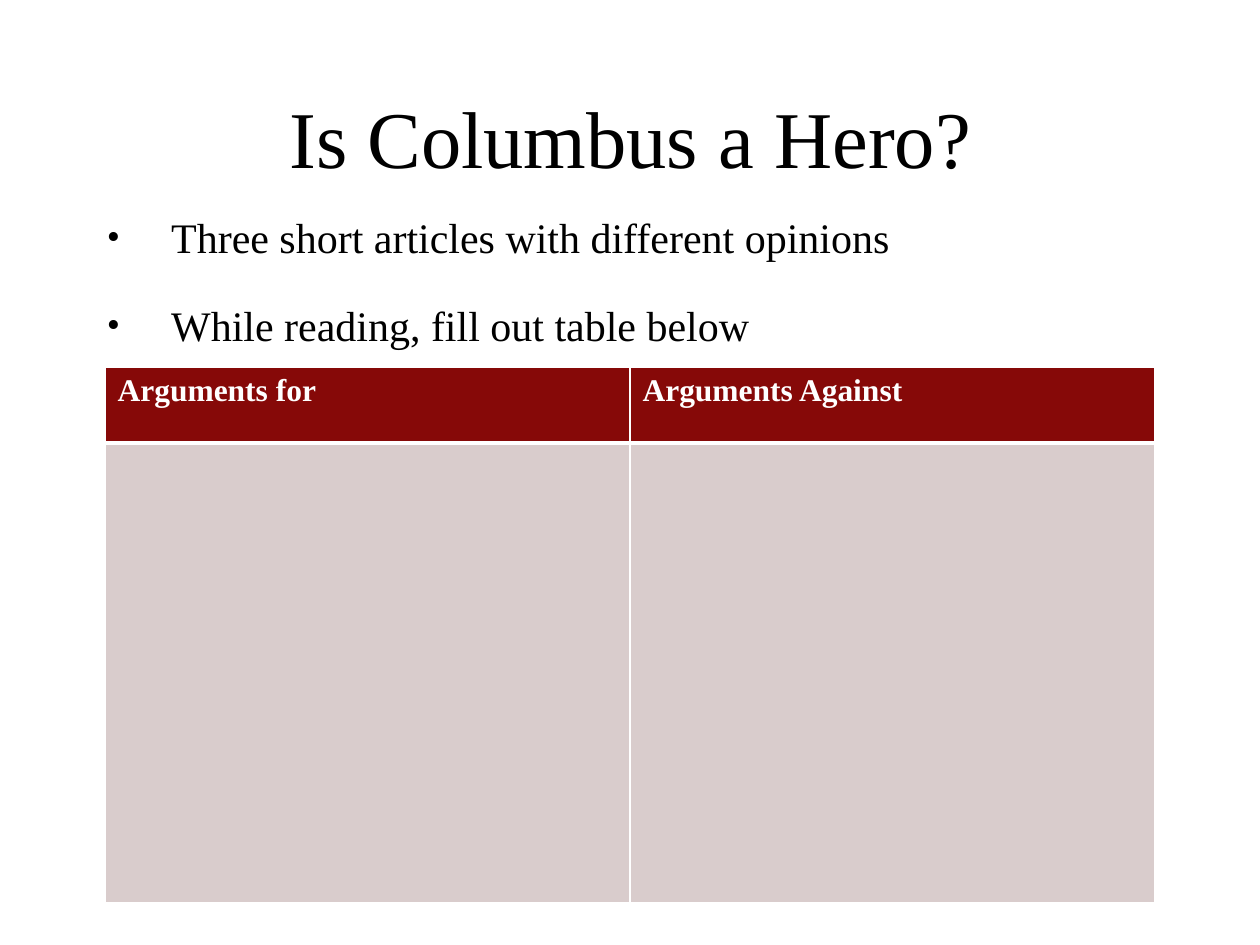
from dataclasses import dataclass

from lxml import etree
from pptx import Presentation
from pptx import util as u
from pptx.dml.color import RGBColor
from pptx.enum import text
from pptx.oxml import ns

COLORS = {"ink": "000000", "paper": "FFFFFF", "header": "860908", "body": "D9CCCC"}
FONT = "Times New Roman"
BULLET_INDENT = 36.72


@dataclass
class Box:
    left: float
    top: float
    width: float
    height: float

    def lengths(self) -> list:
        return [u.Pt(v) for v in (self.left, self.top, self.width, self.height)]


@dataclass
class TableRow:
    labels: tuple
    height: float
    fill: str
    top_line: float
    bottom_line: float


def style(paragraph, size: float, color: str, bold: bool = False) -> None:
    for run in paragraph.runs:
        run.font.name = FONT
        run.font.size = u.Pt(size)
        run.font.bold = bold
        run.font.color.rgb = RGBColor.from_string(COLORS[color])


def add_frame(slide, box: Box, top_margin: float):
    frame = slide.shapes.add_textbox(*box.lengths()).text_frame
    frame.word_wrap = True
    frame.margin_top = u.Pt(top_margin)
    return frame


def add_bullet(paragraph) -> None:
    props = paragraph._p.get_or_add_pPr()
    props.set("marL", str(u.Pt(BULLET_INDENT)))
    props.set("indent", str(-u.Pt(BULLET_INDENT)))
    etree.SubElement(props, ns.qn("a:buSzPct")).set("val", "90000")
    etree.SubElement(props, ns.qn("a:buFont")).set("typeface", FONT)
    etree.SubElement(props, ns.qn("a:buChar")).set("char", "•")


def set_borders(cell, row: TableRow) -> None:
    props = cell._tc.get_or_add_tcPr()
    widths = {"lnL": 1, "lnR": 1, "lnT": row.top_line, "lnB": row.bottom_line}
    for position, (side, width) in enumerate(widths.items()):
        line = etree.Element(ns.qn(f"a:{side}"), w=str(u.Pt(width)))
        fill = etree.SubElement(line, ns.qn("a:solidFill"))
        etree.SubElement(fill, ns.qn("a:srgbClr")).set("val", COLORS["paper"])
        props.insert(position, line)


def add_arguments_table(slide, box: Box, rows: list) -> None:
    columns = len(rows[0].labels)
    table = slide.shapes.add_table(len(rows), columns, *box.lengths()).table
    table.horz_banding = False
    for table_row, row in zip(table.rows, rows):
        table_row.height = u.Pt(row.height)
        for cell, label in zip(table_row.cells, row.labels):
            cell.fill.solid()
            cell.fill.fore_color.rgb = RGBColor.from_string(COLORS[row.fill])
            set_borders(cell, row)
            if label:
                cell.text_frame.text = label
                style(cell.text_frame.paragraphs[0], 18, "paper", bold=True)


def main() -> None:
    deck = Presentation()
    deck.slide_width, deck.slide_height = u.Pt(720), u.Pt(540)
    slide = deck.slides.add_slide(deck.slide_layouts[6])

    # Title
    title = add_frame(slide, Box(72, 39.6, 576, 68.4), top_margin=12)
    title.vertical_anchor = text.MSO_ANCHOR.MIDDLE
    title.text = "Is Columbus a Hero?"
    title.paragraphs[0].alignment = text.PP_ALIGN.CENTER
    style(title.paragraphs[0], 46, "ink")

    # Instructions
    instructions = add_frame(slide, Box(54, 113.76, 600, 403.2), top_margin=7.2)
    instructions.text = "\n".join((
        "Three short articles with different opinions",
        "While reading, fill out table below",
    ))
    for number, instruction in enumerate(instructions.paragraphs):
        add_bullet(instruction)
        instruction.space_before = u.Pt(21.5 if number else 0)
        style(instruction, 24, "ink")

    # Table of arguments
    add_arguments_table(slide, Box(60, 210, 600, 306), [
        TableRow(("Arguments for", "Arguments Against"), 43.2, "header", 1, 3),
        TableRow(("", ""), 262.8, "body", 3, 1),
    ])

    deck.save("out.pptx")


if __name__ == "__main__":
    main()
